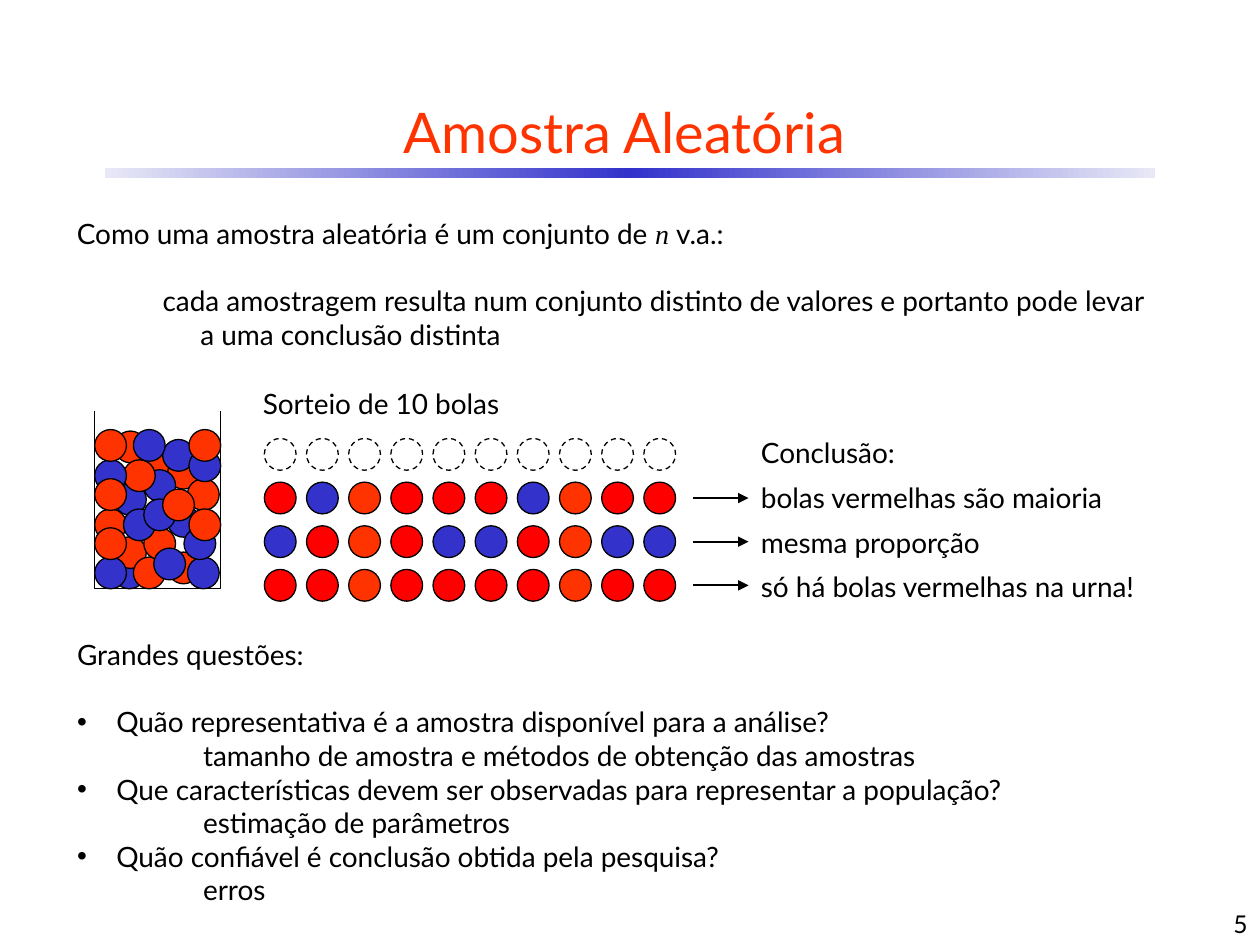
from copy import deepcopy
from dataclasses import dataclass

from lxml import etree
from pptx import Presentation
from pptx.dml.color import RGBColor
from pptx.enum import dml, shapes, text
from pptx.oxml.ns import qn
from pptx.util import Cm, Pt

BLACK = RGBColor(0x00, 0x00, 0x00)
ORANGE = RGBColor(0xFF, 0x33, 0x00)
RED = RGBColor(0xFF, 0x00, 0x00)
BLUE = RGBColor(0x33, 0x33, 0xCC)
PALE = RGBColor(0xE8, 0xE8, 0xF6)
BALL_COLORS = {"O": ORANGE, "R": RED, "B": BLUE}

BODY_FONT = {"name": "Lato", "size": Pt(16)}
BALL = 0.64
ROW_LEFT, ROW_TOP = 5.33, 8.84
COL_STEP, ROW_STEP = 0.85, 0.88
LABEL_LEFT, LABEL_TOP, LABEL_STEP = 15.09, 8.66, 0.9
BLANK_LINE = Pt(19.2)


@dataclass
class Para:
    runs: list[str]  # runs at odd positions are mathematical symbols
    margin: float = 0
    indent: float = 0
    bullet: bool = False
    gap: bool = False


@dataclass
class Draw:
    balls: str  # one colour key per ball, "-" for a ball not yet drawn
    label: str
    arrow: bool = True


INTRO = [
    Para(["Como uma amostra aleatória é um conjunto de ", "n ", "v.a.:"],
         0.48, -0.48, gap=True),
    Para(["cada amostragem resulta num conjunto distinto de valores e portanto "
          "pode levar a uma conclusão distinta"], 2.49, -0.76),
]
QUESTIONS = [
    ("Quão representativa é a amostra disponível para a análise?",
     "tamanho de amostra e métodos de obtenção das amostras"),
    ("Que características devem ser observadas para representar a população?",
     "estimação de parâmetros"),
    ("Quão confiável é conclusão obtida pela pesquisa?", "erros"),
]
DRAWS = [
    Draw("----------", "Conclusão:", arrow=False),
    Draw("RBORRRBORR", "bolas vermelhas são maioria"),
    Draw("BRORBBROBB", "mesma proporção"),
    Draw("RRORRRRORR", "só há bolas vermelhas na urna!"),
]
URN_BALLS = [  # left, top, colour, from back to front
    (2.29, 11.23, "B"), (2.9, 9.07, "O"), (2.31, 8.69, "O"), (3.38, 9.22, "O"),
    (2.31, 10.82, "O"), (2.31, 9.75, "B"), (3.38, 10.19, "B"), (3.78, 9.65, "O"),
    (3.38, 11.13, "O"), (2.9, 9.47, "B"), (3.28, 8.86, "B"), (2.69, 11.23, "O"),
    (3.78, 11.23, "B"), (2.49, 9.27, "O"), (1.91, 10.26, "O"), (1.91, 11.23, "B"),
    (1.91, 9.27, "B"), (2.9, 10.64, "O"), (2.49, 10.26, "B"), (2.9, 10.06, "B"),
    (3.28, 9.86, "O"), (3.71, 10.64, "B"), (3.81, 10.26, "O"), (1.91, 10.64, "O"),
    (3.1, 11.05, "B"), (1.91, 9.65, "O"), (2.69, 8.66, "B"), (3.81, 9.07, "B"),
    (1.91, 8.66, "O"), (3.81, 8.66, "O"),
]


def place(sp, *box: float) -> None:
    for name, value in zip(("left", "top", "width", "height"), box):
        setattr(sp, name, Cm(value))


def add_run(p, content: str, color: RGBColor = BLACK, **font) -> None:
    r = p.add_run()
    r.text = content
    for name, value in (BODY_FONT | font).items():
        setattr(r.font, name, value)
    r.font.color.rgb = color


def write(tf, paras: list[Para]) -> None:
    tf.word_wrap = True
    tf.auto_size = text.MSO_AUTO_SIZE.NONE
    for i, para in enumerate(paras):
        p = tf.add_paragraph() if i else tf.paragraphs[0]
        p.space_before = Pt(0)
        p.space_after = BLANK_LINE if para.gap else Pt(0)
        pPr = p._p.get_or_add_pPr()
        pPr.set("marL", str(Cm(para.margin)))
        pPr.set("indent", str(Cm(para.indent)))
        if para.bullet:
            etree.SubElement(pPr, qn("a:buChar")).set("char", "•")
        else:
            etree.SubElement(pPr, qn("a:buNone"))
        for j, content in enumerate(para.runs):
            symbol = {"name": "Times New Roman", "italic": True} if j % 2 else {}
            add_run(p, content, **symbol)


def add_text(slide, paras: list[Para], *box: float):
    sp = slide.shapes.add_textbox(*map(Cm, box))
    write(sp.text_frame, paras)
    return sp


def add_ball(slide, left: float, top: float, key: str) -> None:
    sp = slide.shapes.add_shape(shapes.MSO_SHAPE.OVAL, *map(Cm, (left, top, BALL, BALL)))
    sp.shadow.inherit = False
    sp.line.color.rgb = BLACK
    sp.line.width = Pt(0.75)
    if key in BALL_COLORS:
        sp.fill.solid()
        sp.fill.fore_color.rgb = BALL_COLORS[key]
    else:
        sp.fill.background()
        sp.line.dash_style = dml.MSO_LINE.DASH


def add_arrow(slide, left: float, right: float, y: float) -> None:
    line = slide.shapes.add_connector(shapes.MSO_CONNECTOR.STRAIGHT,
                                      *map(Cm, (left, y, right, y)))
    line.line.color.rgb = BLACK
    line.line.width = Pt(1)
    etree.SubElement(line.line._get_or_add_ln(), qn("a:tailEnd")).set("type", "triangle")
    etree.SubElement(line._element.spPr, qn("a:effectLst"))


def add_title_bar(slide) -> None:
    sp = slide.shapes.add_shape(shapes.MSO_SHAPE.RECTANGLE,
                                *map(Cm, (2.12, 3.39, 21.17, 0.2)))
    sp.shadow.inherit = False
    sp.line.fill.background()
    sp.fill.gradient()
    sp.fill.gradient_angle = 0
    stops = sp._element.spPr.find(".//" + qn("a:gsLst"))
    stops.insert(1, deepcopy(stops[0]))
    for stop, position, color in zip(sp.fill.gradient_stops, (0, 0.5, 1), (PALE, BLUE, PALE)):
        stop.position = position
        stop.color.rgb = color


def add_urn(slide) -> None:
    left, top, right, bottom = map(Cm, (1.91, 8.28, 4.45, 11.86))
    builder = slide.shapes.build_freeform(left, top)
    builder.add_line_segments([(left, bottom), (right, bottom), (right, top)], close=False)
    sp = builder.convert_to_shape()
    sp.shadow.inherit = False
    sp.fill.background()
    sp.line.color.rgb = BLACK
    sp.line.width = Pt(0.75)
    for ball in URN_BALLS:
        add_ball(slide, *ball)


def add_draws(slide) -> None:
    add_text(slide, [Para(["Sorteio de 10 bolas"])], 5.05, 7.67, 5.6, 0.94)
    for row, draw in enumerate(DRAWS):
        top = ROW_TOP + row * ROW_STEP
        for col, key in enumerate(draw.balls):
            add_ball(slide, ROW_LEFT + col * COL_STEP, top, key)
        if draw.arrow:
            add_arrow(slide, 13.97, LABEL_LEFT, top + BALL / 2)
        add_text(slide, [Para([draw.label])],
                 LABEL_LEFT, LABEL_TOP + row * LABEL_STEP, 8.6, 0.94)


def main() -> None:
    prs = Presentation()
    prs.slide_width, prs.slide_height = Cm(25.4), Cm(19.05)
    slide = prs.slides.add_slide(prs.slide_layouts[1])
    title, body = slide.placeholders

    add_title_bar(slide)
    place(title, 0.84, 1.7, 23.5, 1.9)
    title.text_frame.vertical_anchor = text.MSO_ANCHOR.MIDDLE
    p = title.text_frame.paragraphs[0]
    p.alignment = text.PP_ALIGN.CENTER
    add_run(p, "Amostra Aleatória", ORANGE, size=Pt(32))

    add_text(slide, INTRO, 1.3, 4.24, 22.2, 3)
    add_urn(slide)
    add_draws(slide)

    place(body, 1.3, 12.73, 22.2, 5.74)
    paras = [Para(["Grandes questões:"], 0.48, -0.48, gap=True)]
    for question, topic in QUESTIONS:
        paras += [Para([question], 0.79, -0.79, bullet=True), Para([topic], 2.54)]
    write(body.text_frame, paras)

    number = slide.shapes.add_textbox(*map(Cm, (20.12, 17.78, 5.28, 1.27)))
    number.text_frame.vertical_anchor = text.MSO_ANCHOR.BOTTOM
    p = number.text_frame.paragraphs[0]
    p.alignment = text.PP_ALIGN.RIGHT
    add_run(p, "5", size=Pt(14))

    prs.save("out.pptx")


if __name__ == "__main__":
    main()
